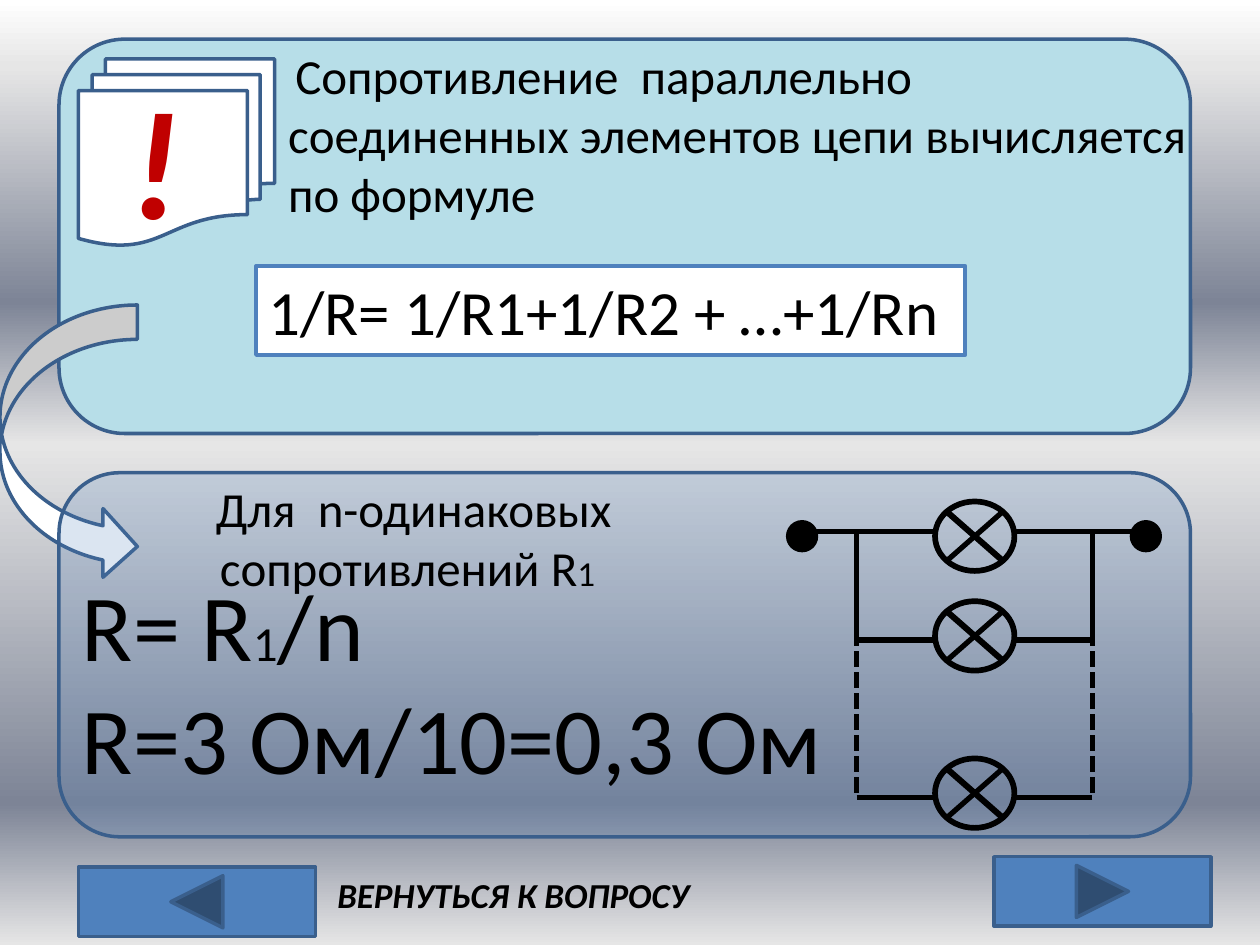
"""Build a slide on the resistance of elements connected in parallel."""
from dataclasses import dataclass

from lxml.etree import SubElement
from pptx import Presentation
from pptx.dml.color import RGBColor
from pptx.enum.dml import MSO_LINE_DASH_STYLE as Dash
from pptx.enum.shapes import MSO_CONNECTOR as Connector, MSO_SHAPE as Shape
from pptx.enum.text import PP_ALIGN as Align
from pptx.oxml.ns import qn
from pptx.util import Cm, Pt


@dataclass(frozen=True)
class Theme:
    """Colours, font and type sizes of the slide."""
    font: str = "Calibri"
    black: str = "000000"
    white: str = "FFFFFF"
    red: str = "C00000"
    sky: str = "B7DEE8"
    blue: str = "4F81BD"
    outline: str = "3A5F8C"
    tiny: int = 18
    small: int = 20
    body: int = 28
    formula: int = 36
    result: int = 54
    mark: int = 88
    border: float = 2
    wire: float = 3
    lamp: float = 3.25
    stroke: float = 3.5


THEME = Theme()
BACKGROUND = [(0, "FFFFFF"), (7, "E6E6E6"), (32, "7D8496"),
              (47, "E6E6E6"), (85, "7D8496"), (100, "E6E6E6")]

RULE_PANEL = (1.19, 0.79, 22.81, 7.95)
EXAMPLE_PANEL = (1.19, 9.53, 22.81, 7.34)
NOTE_SHEETS = (1.58, 1.19, 3.96, 3.76)
CURVED_ARROW = (0, 6.15, 2.77, 5.56)
BACK_BUTTON = (1.58, 17.48, 4.78, 1.4)
NEXT_BUTTON = (20.04, 17.27, 4.37, 1.4)

MARK = ((2.39, 1.19, 1.98, 4.01), [[("!", THEME.mark)]])
RETURN_LABEL = ((6.55, 17.48, 8.53, 1.12), [[("ВЕРНУТЬСЯ К ВОПРОСУ", THEME.small)]])
RULE = ((5.56, 0.79, 18.65, 3.84), [[
    (" ", THEME.tiny),
    ("Сопротивление  параллельно соединенных элементов цепи вычисляется по формуле",
     THEME.body)]])
FORMULA = ((5.16, 5.36, 14.3, 1.8), [[("1/R= 1/R1+1/R2 + …+1/Rn", THEME.formula)]])
RESULT = ((1.4, 11.3, 19.25, 4.88), [
    [("R= R", THEME.result), ("1", THEME.body), ("/n", THEME.result)],
    [("R=3 Ом/10=0,3 Ом", THEME.result)]])
CONDITION = ((3.96, 9.53, 14.3, 2.64), [
    [(" ", THEME.tiny), ("Для  n-одинаковых", THEME.body)],
    [(" сопротивлений R", THEME.body), ("1", THEME.small)]])

LAMP_LEFT, LAMP_WIDTH, LAMP_HEIGHT = 18.85, 1.6, 1.4
LAMP_TOPS = [10.11, 12.12, 15.29]
CROSS_INSET = (0.23, 0.2)
WIRE_LEVELS = [10.72, 12.9, 16.08]
DASH_START = 12.7
DOT_TOP, DOT_SIZE = 10.52, 0.58
SIDES = [  # dot left, outer wire end, branch, lamp side
    (15.88, 16.28, 17.27, LAMP_LEFT),
    (22.81, 23.01, 22.02, LAMP_LEFT + LAMP_WIDTH),
]
SIDES = [dict(zip(("dot", "end", "branch", "lamp"), side)) for side in SIDES]


def rgb(colour):
    """Return a colour object."""
    return RGBColor.from_string(colour)


def paint(shape, fill, line, width):
    """Set the fill and the outline of a shape."""
    if fill:
        shape.fill.solid()
        shape.fill.fore_color.rgb = rgb(fill)
    else:
        shape.fill.background()
    shape.line.color.rgb = rgb(line)
    shape.line.width = Pt(width)


def add_figure(slide, kind, box, fill, line=THEME.outline, width=THEME.border):
    """Add a preset shape without shadow."""
    shape = slide.shapes.add_shape(kind, *map(Cm, box))
    shape.shadow.inherit = False
    paint(shape, fill, line, width)
    return shape


def add_text(slide, box, paragraphs, colour=THEME.black, strong=False):
    """Add a wrapped text box run by run."""
    shape = slide.shapes.add_textbox(*map(Cm, box))
    frame = shape.text_frame
    frame.word_wrap = True
    for index, runs in enumerate(paragraphs):
        paragraph = frame.add_paragraph() if index else frame.paragraphs[0]
        paragraph.alignment = Align.LEFT
        for text, size in runs:
            run = paragraph.add_run()
            run.text = text
            run.font.name = THEME.font
            run.font.size = Pt(size)
            run.font.bold = run.font.italic = strong
            run.font.color.rgb = rgb(colour)
    return shape


def add_wire(slide, start, end, width=THEME.wire, dash=None):
    """Add a straight black line."""
    wire = slide.shapes.add_connector(Connector.STRAIGHT, *map(Cm, start + end))
    wire.line.color.rgb = rgb(THEME.black)
    wire.line.width = Pt(width)
    if dash:
        wire.line.dash_style = dash
    SubElement(wire._element.spPr, qn("a:effectLst"))


def set_background(slide):
    """Fill the background with a vertical gradient."""
    fill = slide.background.fill
    fill.gradient()
    fill.gradient_angle = 270
    stops = fill._fill._gradFill.find(qn("a:gsLst"))
    stops.clear()
    for position, colour in BACKGROUND:
        stop = SubElement(stops, qn("a:gs"), pos=str(position * 1000))
        SubElement(stop, qn("a:srgbClr"), val=colour)


def add_lamp(slide, top):
    """Add a circle with a diagonal cross."""
    add_figure(slide, Shape.OVAL, (LAMP_LEFT, top, LAMP_WIDTH, LAMP_HEIGHT),
               None, THEME.black, THEME.lamp)
    inset_x, inset_y = CROSS_INSET
    left, right = LAMP_LEFT + inset_x, LAMP_LEFT + LAMP_WIDTH - inset_x
    upper, lower = top + inset_y, top + LAMP_HEIGHT - inset_y
    add_wire(slide, (left, upper), (right, lower), THEME.stroke)
    add_wire(slide, (right, upper), (left, lower))


def add_circuit(slide):
    """Add the lamps, terminals and wires."""
    for top in LAMP_TOPS:
        add_lamp(slide, top)
    first, second, last = WIRE_LEVELS
    for side in SIDES:
        branch = side["branch"]
        for level in WIRE_LEVELS:
            outer = side["end"] if level == first else branch
            add_wire(slide, (outer, level), (side["lamp"], level))
        add_figure(slide, Shape.OVAL, (side["dot"], DOT_TOP, DOT_SIZE, DOT_SIZE),
                   THEME.black, THEME.black)
        add_wire(slide, (branch, first), (branch, second))
        add_wire(slide, (branch, DASH_START), (branch, last), dash=Dash.SQUARE_DOT)


def main():
    """Build and save the presentation."""
    presentation = Presentation()
    presentation.slide_width, presentation.slide_height = Cm(25.4), Cm(19.05)
    slide = presentation.slides.add_slide(presentation.slide_layouts[6])
    set_background(slide)

    add_figure(slide, Shape.ROUNDED_RECTANGLE, RULE_PANEL, THEME.sky)
    add_figure(slide, Shape.FLOWCHART_MULTIDOCUMENT, NOTE_SHEETS, THEME.white)
    add_text(slide, *MARK, colour=THEME.red, strong=True)
    add_figure(slide, Shape.CURVED_RIGHT_ARROW, CURVED_ARROW, THEME.white)
    add_figure(slide, Shape.ACTION_BUTTON_BACK_OR_PREVIOUS, BACK_BUTTON, THEME.blue)
    add_text(slide, *RETURN_LABEL, strong=True)
    add_text(slide, *RULE)
    paint(add_text(slide, *FORMULA), THEME.white, THEME.blue, THEME.border)

    panel = add_figure(slide, Shape.ROUNDED_RECTANGLE, EXAMPLE_PANEL, THEME.blue)
    colour = panel._element.spPr.find(qn("a:solidFill")).find(qn("a:srgbClr"))
    SubElement(colour, qn("a:alpha"), val="20000")
    add_circuit(slide)
    add_text(slide, *RESULT)
    add_text(slide, *CONDITION)
    add_figure(slide, Shape.ACTION_BUTTON_FORWARD_OR_NEXT, NEXT_BUTTON, THEME.blue)
    presentation.save("out.pptx")


if __name__ == "__main__":
    main()
